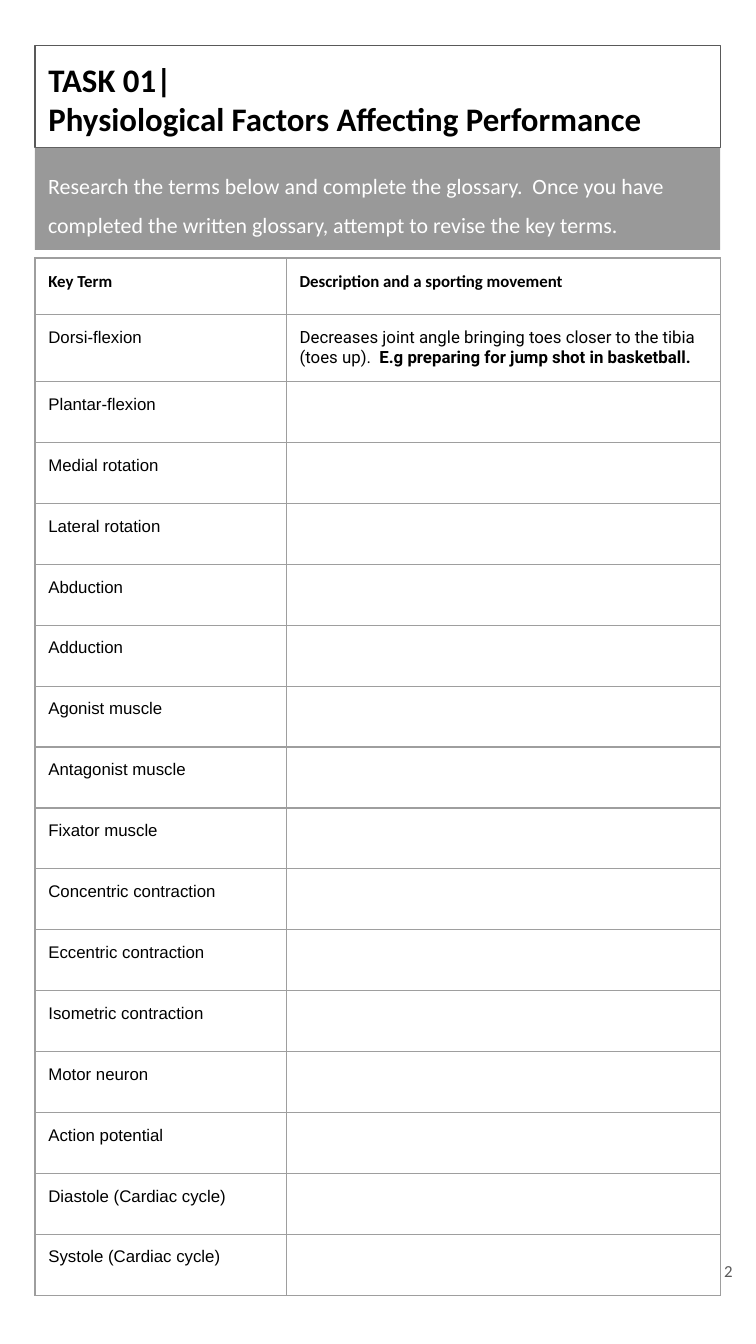
from dataclasses import dataclass

from lxml import etree
from pptx import Presentation
from pptx import util as u
from pptx.dml.color import RGBColor
from pptx.enum import text
from pptx.oxml.ns import qn

PAGE_HEIGHT = 10
PAGE_WIDTH = PAGE_HEIGHT * 9 / 16
LEFT, WIDTH = 0.26, 5.1
TABLE_TOP, TABLE_BOTTOM = 1.92, 9.64
HEADER_HEIGHT, EXAMPLE_HEIGHT = 0.42, 0.5
COLUMN_WIDTHS = (1.87, 3.23)
INSET = 0.1
GRID_COLOR = "9E9E9E"

TERMS = (
    "Plantar-flexion", "Medial rotation", "Lateral rotation", "Abduction",
    "Adduction", "Agonist muscle", "Antagonist muscle", "Fixator muscle",
    "Concentric contraction", "Eccentric contraction", "Isometric contraction",
    "Motor neuron", "Action potential", "Diastole (Cardiac cycle)",
    "Systole (Cardiac cycle)",
)


@dataclass(frozen=True)
class Style:
    font: str
    size: float
    color: str = "000000"
    bold: bool = False


TITLE = Style("Calibri", 17.6, bold=True)
INTRO = Style("Calibri", 11.7, "FFFFFF")
NUMBER = Style("Calibri", 9, "595959")
HEADER = Style("Calibri", 9, bold=True)
TERM = Style("Arial", 9)
DETAIL = Style("Roboto", 9)
EXAMPLE = Style("Roboto", 9, bold=True)


def rgb(value: str) -> RGBColor:
    return RGBColor.from_string(value)


def style_run(span, style: Style) -> None:
    span.font.name = style.font
    span.font.size = u.Pt(style.size)
    span.font.bold = style.bold
    span.font.color.rgb = rgb(style.color)


def place(box, left: float, top: float, width: float, height: float) -> None:
    box.left, box.top = u.Inches(left), u.Inches(top)
    box.width, box.height = u.Inches(width), u.Inches(height)


def set_insets(holder) -> None:
    holder.margin_left = holder.margin_right = u.Inches(INSET)
    holder.margin_top = holder.margin_bottom = u.Inches(INSET)


def write_box(box, words: str, style: Style, anchor, align) -> None:
    frame = box.text_frame
    frame.text = words
    frame.word_wrap = True
    frame.auto_size = text.MSO_AUTO_SIZE.NONE
    frame.vertical_anchor = anchor
    set_insets(frame)
    for para in frame.paragraphs:
        para.alignment = align
        for span in para.runs:
            style_run(span, style)


def write_cell(cell, *parts: tuple[str, Style]) -> None:
    set_insets(cell)
    para = cell.text_frame.paragraphs[0]
    for words, style in parts:
        span = para.add_run()
        span.text = words
        style_run(span, style)


def outline_cell(cell) -> None:
    cell.fill.background()
    properties = cell._tc.get_or_add_tcPr()
    for index, side in enumerate(("a:lnL", "a:lnR", "a:lnT", "a:lnB")):
        line = etree.Element(qn(side), w=str(u.Pt(0.75)))
        fill = etree.SubElement(line, qn("a:solidFill"))
        etree.SubElement(fill, qn("a:srgbClr"), val=GRID_COLOR)
        properties.insert(index, line)


def add_glossary(page) -> None:
    frame = page.shapes.add_table(
        len(TERMS) + 2, 2, u.Inches(LEFT), u.Inches(TABLE_TOP),
        u.Inches(WIDTH), u.Inches(TABLE_BOTTOM - TABLE_TOP))
    table = frame.table
    table.first_row = table.horz_banding = False

    # Column widths and row heights: the blank rows share what is left
    for column, width in zip(table.columns, COLUMN_WIDTHS):
        column.width = u.Inches(width)
    blank_space = TABLE_BOTTOM - TABLE_TOP - HEADER_HEIGHT - EXAMPLE_HEIGHT
    heights = [HEADER_HEIGHT, EXAMPLE_HEIGHT] + [blank_space / len(TERMS)] * len(TERMS)
    for row, height in zip(table.rows, heights):
        row.height = u.Inches(height)

    # Header, worked example and terms to complete
    write_cell(table.cell(0, 0), ("Key Term", HEADER))
    write_cell(table.cell(0, 1), ("Description and a sporting movement", HEADER))
    write_cell(
        table.cell(1, 1),
        ("Decreases joint angle bringing toes closer to the tibia (toes up). ", DETAIL),
        (" E.g preparing for jump shot in basketball.", EXAMPLE))
    for index, term in enumerate(("Dorsi-flexion", *TERMS), start=1):
        write_cell(table.cell(index, 0), (term, TERM))

    for cell in table.iter_cells():
        outline_cell(cell)


def main() -> None:
    deck = Presentation()
    deck.slide_width, deck.slide_height = u.Inches(PAGE_WIDTH), u.Inches(PAGE_HEIGHT)
    page = deck.slides.add_slide(deck.slide_layouts.get_by_name("Title Only"))

    # Task title
    title = page.shapes.title
    place(title, LEFT, 0.34, WIDTH, 0.76)
    title.line.color.rgb = rgb("595959")
    title.line.width = u.Pt(0.75)
    write_box(title, "TASK 01|\nPhysiological Factors Affecting Performance",
              TITLE, text.MSO_ANCHOR.TOP, text.PP_ALIGN.LEFT)

    # Instructions band
    intro = page.shapes.add_textbox(0, 0, 0, 0)
    place(intro, LEFT, 1.1, WIDTH, 0.76)
    intro.fill.solid()
    intro.fill.fore_color.rgb = rgb("999999")
    write_box(intro, "Research the terms below and complete the glossary.  Once you have "
              "completed the written glossary, attempt to revise the key terms.",
              INTRO, text.MSO_ANCHOR.MIDDLE, text.PP_ALIGN.LEFT)
    para = intro.text_frame.paragraphs[0]
    para.line_spacing = 1.5
    para.space_after = u.Pt(12)

    # Page number
    number = page.shapes.add_textbox(0, 0, 0, 0)
    place(number, 5.21, 9.07, 0.34, 0.77)
    write_box(number, "2", NUMBER, text.MSO_ANCHOR.MIDDLE, text.PP_ALIGN.RIGHT)

    add_glossary(page)
    deck.save("out.pptx")


if __name__ == "__main__":
    main()
